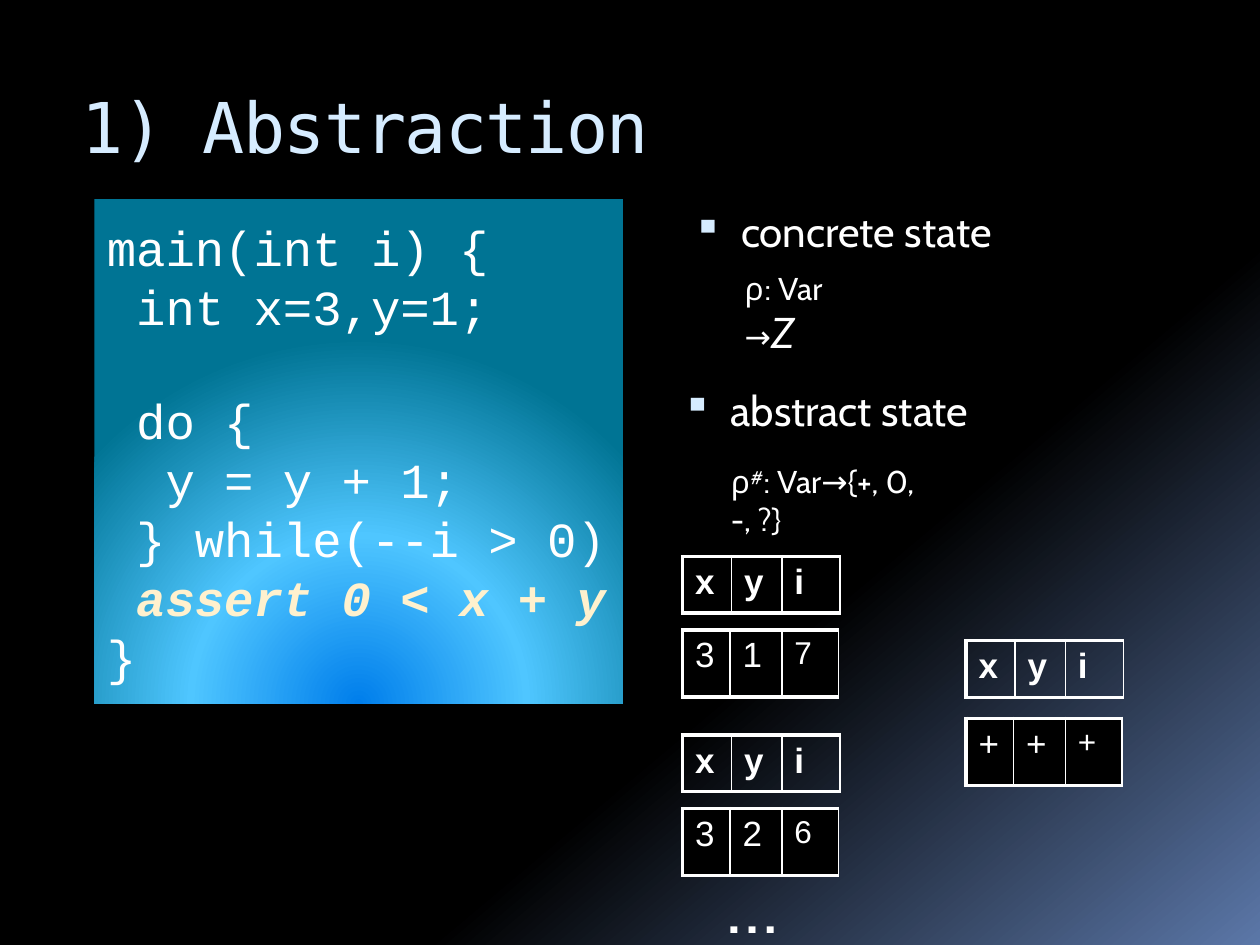
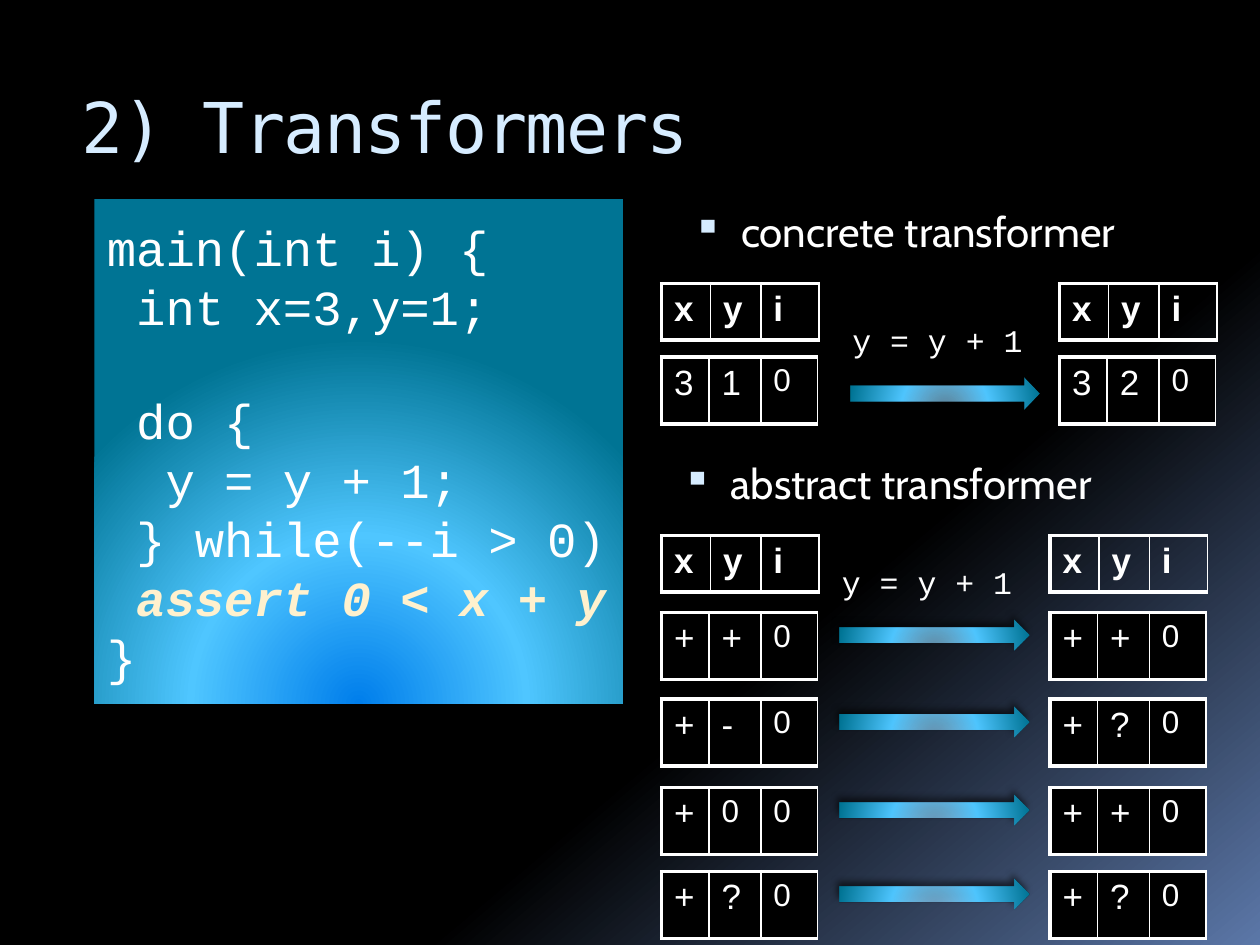
from pptx import Presentation
from pptx.dml.color import RGBColor as RGB
from pptx.enum.shapes import MSO_SHAPE as Kind
from pptx.enum.text import MSO_ANCHOR as Anchor, PP_ALIGN as Align
from pptx.oxml import parse_xml
from pptx.oxml.ns import nsdecls, qn
from pptx.util import Pt

BLACK = RGB(0x00, 0x00, 0x00)
WHITE = RGB(0xFF, 0xFF, 0xFF)
PALE = RGB(0xD6, 0xEC, 0xFF)
CREAM = RGB(0xFF, 0xF1, 0xCE)
SLATE = RGB(0x5B, 0x77, 0xA8)
BLUE = RGB(0x00, 0x7E, 0xEB)
SKY = RGB(0x4F, 0xC6, 0xFF)
MIST = RGB(0x98, 0xD8, 0xFE)
TEAL = RGB(0x00, 0x74, 0x94)

# Gradient stops: position in %, colour, opacity in %
NIGHT = [(0, BLACK, 100), (65, BLACK, 100), (100, SLATE, 100)]
GLOW = [(0, BLUE, 100), (46, SKY, 100), (100, TEAL, 100)]
BEAM = [(0, MIST, 58), (46, SKY, 100), (100, TEAL, 100)]

MONO, SANS, CODE = "DejaVu Sans Mono", "Cabin", "Courier New"

# Content shared by both slides; an empty string is a skipped line
LINES = ["main(int i) {", " int x=3,y=1;", "", " do {", "  y = y + 1;",
         " } while(--i > 0)", " assert 0 < x + y", "}"]
NAMES = "xyi"
STEP = "y = y + 1"

# Slide 1: heads (text, left, top) and states (left, top, gap, values)
ABSTRACT = {
    "title": "1) Abstraction",
    "heads": [("concrete state", 384, 114), ("abstract state", 378, 216)],
    "states": [(390, 318, 42, "317"), (390, 420, 42, "326"),
               (552, 366, 44.5, "+++")],
}

# Slide 2: each step maps the left values to the right ones
MOVES = {
    "title": "2) Transformers",
    "heads": [("concrete transformer", 384, 114),
              ("abstract transformer", 378, 258)],
    "groups": [
        {"top": 162, "rows": [204], "right": 605.5, "arrow": 486, "drop": 12,
         "label": 180, "steps": [("310", "320")]},
        {"top": 306, "rows": [350, 399.5, 450, 498], "right": 600,
         "arrow": 480, "drop": 4, "label": 318,
         "steps": [("++0", "++0"), ("+-0", "+?0"),
                   ("+00", "++0"), ("+?0", "+?0")]},
    ],
}
LEFT = 378


def grade(host, stops, way):
    """Put the stops into the gradient fill found inside host."""
    marks = "".join(
        f'<a:gs pos="{pos * 1000}"><a:srgbClr val="{tint}">'
        f'<a:alpha val="{solid * 1000}"/></a:srgbClr></a:gs>'
        for pos, tint, solid in stops)
    new = parse_xml(f'<a:gradFill {nsdecls("a")} rotWithShape="1">'
                    f'<a:gsLst>{marks}</a:gsLst>{way}</a:gradFill>')
    old = next(host.iter(qn("a:gradFill")))
    old.getparent().replace(old, new)


def style(run, size, face, tint=WHITE, bold=False, slant=False):
    font = run.font
    font.size, font.name, font.color.rgb = Pt(size), face, tint
    font.bold, font.italic = bold, slant


def add_text(slide, left, top, wide, high, parts, wrap=False):
    """Text box with one paragraph of (text, size, face, slant) parts."""
    box = slide.shapes.add_textbox(Pt(left), Pt(top), Pt(wide), Pt(high))
    box.text_frame.word_wrap = wrap
    para = box.text_frame.paragraphs[0]
    for text, size, face, slant in parts:
        run = para.add_run()
        run.text = text
        style(run, size, face, slant=slant)
    return para


def add_head(slide, text, left, top):
    para = add_text(slide, left, top, 288, 90,
                    [(text, 24, SANS, False)], wrap=True)
    props = para._p.get_or_add_pPr()
    props.set("marL", str(Pt(32.4)))
    props.set("indent", str(-Pt(27.4)))
    for item in (f'<a:buClr {nsdecls("a")}><a:srgbClr val="{PALE}"/></a:buClr>',
                 f'<a:buSzPct {nsdecls("a")} val="95000"/>',
                 f'<a:buChar {nsdecls("a")} char="▪"/>'):
        props.append(parse_xml(item))


def add_glow(slide, kind, left, top, wide, high, stops):
    """Shape lit from the middle of its lower edge, with a soft shadow."""
    shape = slide.shapes.add_shape(kind, Pt(left), Pt(top), Pt(wide), Pt(high))
    shape.fill.gradient()
    grade(shape._element.spPr, stops,
          '<a:path path="circle"><a:fillToRect l="50000" t="100000" '
          'r="50000" b="0"/></a:path>')
    shape.line.fill.background()
    shape._element.spPr.append(parse_xml(
        f'<a:effectLst {nsdecls("a")}><a:outerShdw blurRad="{Pt(4)}" '
        f'dist="{Pt(3)}" dir="{245 * 60000}" rotWithShape="0">'
        f'<a:srgbClr val="{BLACK}"><a:alpha val="60000"/></a:srgbClr>'
        '</a:outerShdw></a:effectLst>'))
    return shape


def add_code(slide):
    frame = add_glow(slide, Kind.RECTANGLE, 54, 114, 302, 288,
                     GLOW).text_frame
    frame.word_wrap = False
    frame.vertical_anchor = Anchor.MIDDLE
    shown = [line for line in LINES if line]
    frame.text = "\n".join(shown)
    for line, para in zip(shown, frame.paragraphs):
        para.alignment = Align.LEFT
        if LINES[LINES.index(line) - 1] == "":
            para.space_before = Pt(31.7)
        key = "assert" in line
        style(para.runs[0], 28, CODE, CREAM if key else WHITE, key, key)


def add_row(slide, left, top, high, cols, texts, head):
    """One-row table: bold and clear for names, black for values."""
    table = slide.shapes.add_table(1, len(cols), Pt(left), Pt(top),
                                   Pt(sum(cols)), Pt(high)).table
    table.first_row = table.horz_banding = False
    table.rows[0].height = Pt(high)
    for i, (wide, text) in enumerate(zip(cols, texts)):
        table.columns[i].width = Pt(wide)
        cell = table.cell(0, i)
        cell.text = text
        small = not head and (i == 2 or text == "0")
        style(cell.text_frame.paragraphs[0].runs[0], 18 if small else 20,
              "Arial", bold=head)
        props = cell._tc.get_or_add_tcPr()
        for side, width in zip("LRTB", (1 if i else 2.25, 1, 2.25, 2.25)):
            props.append(parse_xml(
                f'<a:ln{side} {nsdecls("a")} w="{Pt(width)}"><a:solidFill>'
                f'<a:srgbClr val="{WHITE}"/></a:solidFill></a:ln{side}>'))
        if head:
            cell.fill.background()
        else:
            cell.fill.solid()
            cell.fill.fore_color.rgb = BLACK


def add_names(slide, left, top):
    add_row(slide, left, top, 32.4, (28, 28.8, 33.2), NAMES, True)


def add_vals(slide, left, top, vals):
    add_row(slide, left, top, 38.2, (27.2, 29.6, 32.4), vals, False)


def add_page(deck, data):
    """Slide with its title, code box and bulleted heads."""
    slide = deck.slides.add_slide(deck.slide_layouts[5])
    title = slide.shapes.title
    title.left, title.top, title.width, title.height = map(
        Pt, (39.6, 40.3, 612, 72))
    frame = title.text_frame
    frame.text = data["title"]
    frame.vertical_anchor = Anchor.TOP
    frame.margin_top = Pt(7.2)
    para = frame.paragraphs[0]
    para.alignment = Align.LEFT
    style(para.runs[0], 40, MONO, PALE)
    para.runs[0].font._element.set("spc", "-100")
    add_code(slide)
    for head in data["heads"]:
        add_head(slide, *head)
    return slide


def main():
    deck = Presentation()
    deck.slide_width, deck.slide_height = Pt(720), Pt(540)
    master = deck.slide_master
    master.background.fill.gradient()
    grade(master.element, NIGHT, f'<a:lin ang="{50 * 60000}" scaled="0"/>')

    # Slide 1: state formulas and example states
    slide = add_page(deck, ABSTRACT)
    add_text(slide, 418.5, 150, 83, 36,
             [("ρ: Var →", 18, SANS, False), ("Z", 24, "Lato", True)],
             wrap=True)
    para = add_text(slide, 410.5, 260.5, 152, 29,
                    [(text, 18, SANS, False)
                     for text in ("ρ", "#", ": Var→{+, 0, -, ?}")])
    para.runs[1].font._element.set("baseline", "30000")
    for left, top, gap, vals in ABSTRACT["states"]:
        add_names(slide, left, top)
        add_vals(slide, left, top + gap, vals)
    add_text(slide, 408, 486, 50, 60, [("…", 44, SANS, False)])

    # Slide 2: states before and after the step
    slide = add_page(deck, MOVES)
    for group in MOVES["groups"]:
        sides = LEFT, group["right"]
        for left in sides:
            add_names(slide, left, group["top"])
        add_text(slide, group["arrow"] - 6, group["label"], 112, 29,
                 [(STEP, 18, CODE, False)])
        for top, step in zip(group["rows"], group["steps"]):
            for left, vals in zip(sides, step):
                add_vals(slide, left, top, vals)
            add_glow(slide, Kind.RIGHT_ARROW, group["arrow"],
                     top + group["drop"], 108, 18, BEAM)

    deck.save("out.pptx")


if __name__ == "__main__":
    main()
